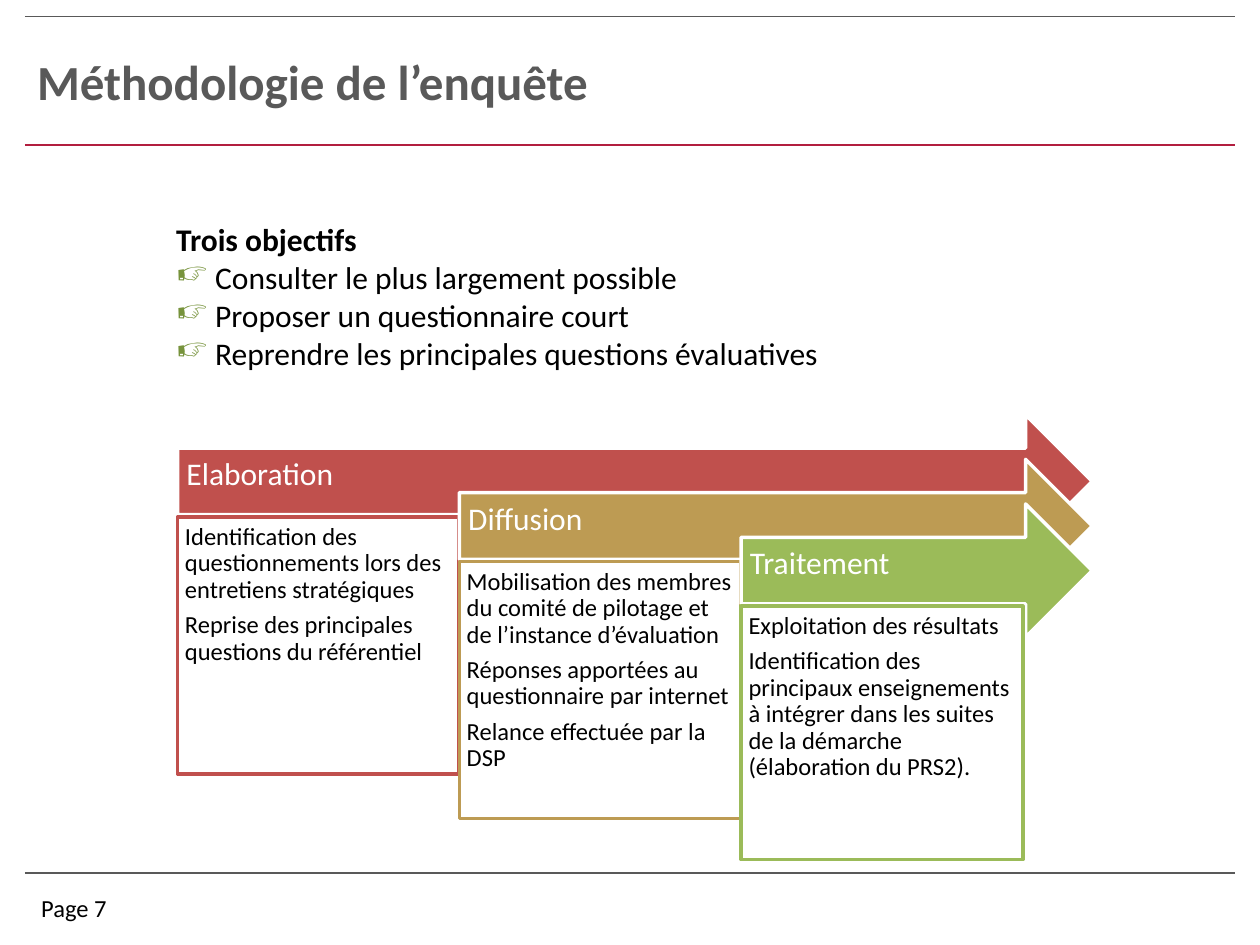
from dataclasses import dataclass

from lxml import etree
from pptx import Presentation
from pptx.dml.color import RGBColor
from pptx.enum.shapes import MSO_CONNECTOR, MSO_SHAPE
from pptx.enum.text import MSO_ANCHOR, PP_ALIGN
from pptx.oxml.ns import qn
from pptx.util import Cm, Pt

LINE = MSO_CONNECTOR.STRAIGHT
ARROW, RECT = MSO_SHAPE.RIGHT_ARROW, MSO_SHAPE.RECTANGLE
TOP, MIDDLE = MSO_ANCHOR.TOP, MSO_ANCHOR.MIDDLE
LEFT = PP_ALIGN.LEFT


@dataclass(frozen=True)
class Theme:
    font: str = "Calibri"
    gray: str = "595959"
    rule: str = "B21E3F"
    ink: str = "000000"
    paper: str = "FFFFFF"
    mark: str = "77933C"
    title: int = 28
    head: int = 18
    body: int = 14


THEME = Theme()
TITLE = "Méthodologie de l’enquête"
PAGE = "Page 7"
GOALS = "Trois objectifs"
ITEMS = [
    "Consulter le plus largement possible",
    "Proposer un questionnaire court",
    "Reprendre les principales questions évaluatives",
]
STEPS = [
    ("Elaboration", "C0504D", 5.18, [
        "Identification des questionnements lors des entretiens stratégiques",
        "Reprise des principales questions du référentiel",
    ]),
    ("Diffusion", "BD9B53", 5.18, [
        "Mobilisation des membres du comité de pilotage et de l’instance d’évaluation",
        "Réponses apportées au questionnaire par internet",
        "Relance effectuée par la DSP",
    ]),
    ("Traitement", "9BBB59", 5.11, [
        "Exploitation des résultats",
        "Identification des principaux enseignements à intégrer dans les suites "
        "de la démarche (élaboration du PRS2).",
    ]),
]
RULES = [(0.33, THEME.gray, 1), (2.92, THEME.rule, 1.5), (17.6, THEME.gray, 1)]
X, Y, END = 3.58, 8.36, 22.02
WIDE, DROP = 5.68, 0.9
TALL, GAP = 2.69, 2.06


def color(code):
    """Turn a hex code into a colour."""
    return RGBColor.from_string(code)


def add_rule(slide, y, code, width):
    """Draw a line across the slide."""
    rule = slide.shapes.add_connector(LINE, Cm(0.5), Cm(y), Cm(24.9), Cm(y))
    rule.line.color.rgb = color(code)
    rule.line.width = Pt(width)
    etree.SubElement(rule._element.spPr, qn("a:effectLst"))


def add_text(frame, lines, size, code, bold=False, anchor=TOP):
    """Fill a text frame with one paragraph for each line."""
    frame.word_wrap = True
    frame.vertical_anchor = anchor
    for i, line in enumerate(lines):
        para = frame.paragraphs[0] if i == 0 else frame.add_paragraph()
        para.alignment = LEFT
        run = para.add_run()
        run.text = line
        run.font.name = THEME.font
        run.font.size = Pt(size)
        run.font.bold = bold
        run.font.color.rgb = color(code)
    return frame


def add_box(slide, *place):
    """Add a text box and return its frame."""
    return slide.shapes.add_textbox(*map(Cm, place)).text_frame


def add_mark(para):
    """Give a paragraph a pointing hand and a hanging indent."""
    props = para._p.get_or_add_pPr()
    props.set("marL", str(Cm(0.79)))
    props.set("indent", str(-Cm(0.79)))
    tint = etree.SubElement(props, qn("a:buClr"))
    etree.SubElement(tint, qn("a:srgbClr"), val=THEME.mark)
    etree.SubElement(props, qn("a:buChar"), char="☞")


def add_shape(slide, kind, place, fill, edge, pads):
    """Add a filled shape and return its frame."""
    shape = slide.shapes.add_shape(kind, *map(Cm, place))
    shape.shadow.inherit = False
    shape.fill.solid()
    shape.fill.fore_color.rgb = color(fill)
    shape.line.color.rgb = color(edge)
    shape.line.width = Pt(2)
    frame = shape.text_frame
    (frame.margin_left, frame.margin_top,
     frame.margin_right, frame.margin_bottom) = map(Cm, pads)
    return frame


def set_gaps(frame, after):
    """Set line and paragraph spacing."""
    for para in frame.paragraphs:
        para.line_spacing = 0.9
        para.space_after = Pt(after)


def add_step(slide, i, name, code, tall, lines):
    """Add an arrow with its box of details."""
    x, y = X + i * WIDE, Y + i * DROP
    head = add_shape(slide, ARROW, (x, y, END - x, TALL), code, THEME.paper,
                     (0.18, 0.18, 0.71, 0.43))
    add_text(head, [name], THEME.head, THEME.paper, anchor=MIDDLE)
    set_gaps(head, 6)
    body = add_shape(slide, RECT, (x, y + GAP, WIDE, tall), THEME.paper, code,
                     (0.15,) * 4)
    add_text(body, lines, THEME.body, THEME.ink)
    set_gaps(body, 5)


def main():
    """Build the slide and save it."""
    deck = Presentation()
    deck.slide_width, deck.slide_height = Cm(25.4), Cm(19.05)
    slide = deck.slides.add_slide(deck.slide_layouts[6])
    for rule in RULES:
        add_rule(slide, *rule)
    add_text(add_box(slide, 0.58, 17.88, 2.9, 0.86), [PAGE], THEME.body, THEME.ink)
    add_text(add_box(slide, 0.5, 0.33, 24.4, 2.59), [TITLE], THEME.title,
             THEME.gray, True, MIDDLE)
    for i, step in enumerate(STEPS):
        add_step(slide, i, *step)
    goals = add_text(add_box(slide, 3.3, 4.32, 13.61, 3.33), [GOALS, *ITEMS],
                     THEME.head, THEME.ink)
    goals.word_wrap = False
    goals.paragraphs[0].runs[0].font.bold = True
    for para in goals.paragraphs[1:]:
        add_mark(para)
    deck.save("out.pptx")


if __name__ == "__main__":
    main()
